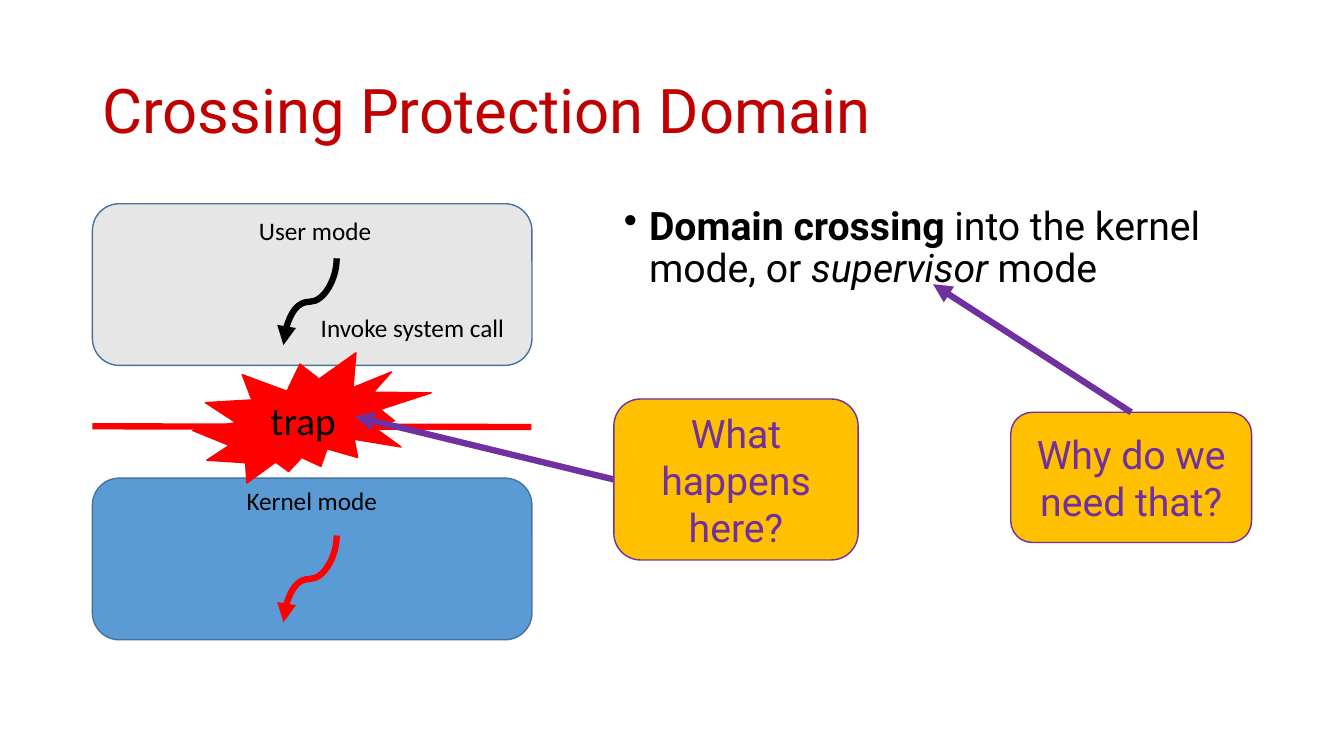
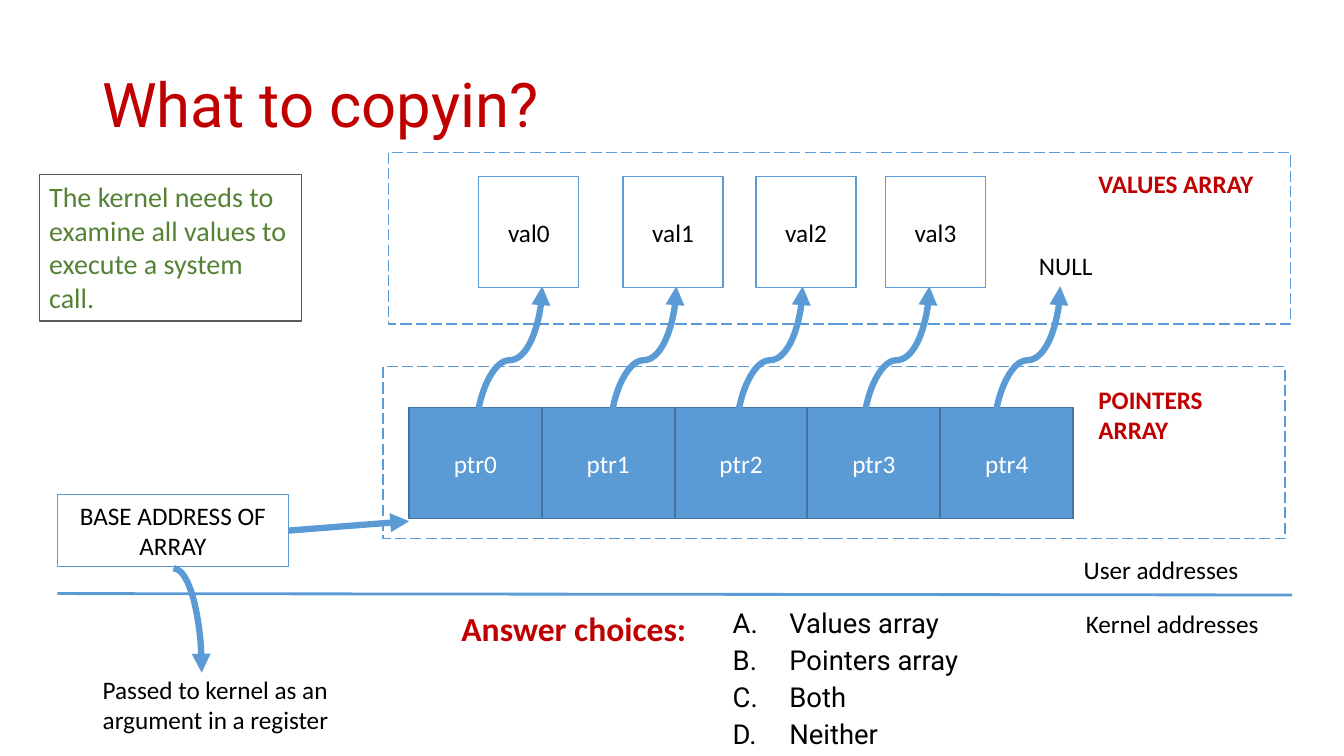
"""Build two slides on system calls: domain crossing and copyin."""
from dataclasses import dataclass

from lxml.etree import SubElement
from pptx import Presentation
from pptx.dml.color import RGBColor
from pptx.enum.dml import MSO_LINE
from pptx.enum.shapes import MSO_CONNECTOR as LINK, MSO_SHAPE as SHAPE
from pptx.enum.text import MSO_ANCHOR as ANCHOR, PP_ALIGN as ALIGN
from pptx.oxml.ns import qn
from pptx.util import Pt


@dataclass(frozen=True)
class Theme:
    """Colours, fonts and type sizes of the presentation."""
    black: str = "000000"
    white: str = "FFFFFF"
    crimson: str = "C00000"
    red: str = "FF0000"
    blue: str = "5B9BD5"
    navy: str = "43739E"
    purple: str = "7030A0"
    amber: str = "FFC000"
    green: str = "548235"
    pale: str = "E7E6E6"
    grey: str = "595959"
    head_font: str = "Roboto"
    label_font: str = "Calibri"
    title: float = 44
    body: float = 28
    heading: float = 24
    note: float = 20
    choice: float = 19.6
    label: float = 18
    thin: float = 0.75
    outline: float = 1
    divider: float = 2
    thick: float = 4.5


T = Theme()


def rgb(code):
    """Return a colour from its hex code."""
    return RGBColor.from_string(code)


def write(holder, paragraphs, size=T.label, color=T.black, font=T.label_font, bold=False,
          align=ALIGN.LEFT, anchor=ANCHOR.TOP, spacing=None, before=None, bullet=None, indent=0):
    """Fill a text frame; a paragraph is a string or a list of (text, bold, italic)."""
    frame = holder.text_frame
    frame.word_wrap = True
    frame.vertical_anchor = anchor
    for number, content in enumerate(paragraphs):
        paragraph = frame.add_paragraph() if number else frame.paragraphs[0]
        if bullet:
            properties = paragraph._p.get_or_add_pPr()
            properties.set("marL", str(Pt(indent)))
            properties.set("indent", str(-Pt(indent)))
            tag, key, value = bullet
            SubElement(properties, qn(tag)).set(key, value)
        paragraph.alignment = align
        paragraph.line_spacing = spacing
        paragraph.space_before = None if before is None else Pt(before)
        paragraph.font.size = Pt(size)
        paragraph.font.name = font
        paragraph.font.color.rgb = rgb(color)
        if isinstance(content, str):
            paragraph.font.bold = bold
            paragraph.add_run().text = content
            continue
        for text, strong, slanted in content:
            run = paragraph.add_run()
            run.text = text
            run.font.bold = strong
            run.font.italic = slanted


def add_text(slide, place, *paragraphs, **style):
    """Add a wrapped text box."""
    write(slide.shapes.add_textbox(*map(Pt, place)), paragraphs, **style)


def add_title(slide, top, text):
    """Add the slide title."""
    add_text(slide, (66, top, 828, 104), text, size=T.title, color=T.crimson,
             font=T.head_font, anchor=ANCHOR.MIDDLE, spacing=0.9)


def add_box(slide, kind, place, fill=None, line=T.blue, width=T.outline, text=None, **style):
    """Add a preset shape with optional fill and text."""
    box = slide.shapes.add_shape(kind, *map(Pt, place))
    box.shadow.inherit = False
    if fill:
        box.fill.solid()
        box.fill.fore_color.rgb = rgb(fill)
    else:
        box.fill.background()
    box.line.color.rgb = rgb(line)
    box.line.width = Pt(width)
    if text:
        write(box, [text], **{"align": ALIGN.CENTER, "anchor": ANCHOR.MIDDLE, **style})
    return box


def add_arrowhead(stroke):
    """Put a triangle at the end of a line."""
    SubElement(stroke.element.spPr.find(qn("a:ln")), qn("a:tailEnd")).set("type", "triangle")


def add_link(slide, start, end, color, width=T.thick, arrow=True, kind=LINK.STRAIGHT):
    """Add a connector between two points."""
    link = slide.shapes.add_connector(kind, *map(Pt, (*start, *end)))
    link.line.color.rgb = rgb(color)
    link.line.width = Pt(width)
    if arrow:
        add_arrowhead(link)
    SubElement(link.element.spPr, qn("a:effectLst"))
    return link


def add_curve(slide, start, end, color):
    """Add an S-shaped arrow that leaves and arrives vertically."""
    (x1, y1), (x2, y2) = start, end
    mid_x, mid_y = (x1 + x2) / 2, (y1 + y2) / 2
    half_x, half_y = (x2 - x1) / 2, (y2 - y1) / 2
    curve = add_link(slide, (mid_x - half_y, mid_y + half_x), (mid_x + half_y, mid_y - half_x),
                     color, kind=LINK.CURVE)
    curve.element.spPr.find(qn("a:xfrm")).set("rot", str(90 * 60000))


def add_mode(slide, top, fill, name, name_place, flow_top, flow_color):
    """Add a processor mode with its name and flow of control."""
    add_box(slide, SHAPE.ROUNDED_RECTANGLE, (66, top, 314, 115.5), fill, T.navy)
    add_text(slide, (*name_place, 199.5, 29), name, align=ALIGN.CENTER)
    add_curve(slide, (240.5, flow_top), (202.5, flow_top + 62), flow_color)


def add_question(slide, place, text):
    """Add an amber question callout."""
    add_box(slide, SHAPE.ROUNDED_RECTANGLE, place, T.amber, T.purple, text=text,
            size=T.body, color=T.purple, font=T.head_font)


def build_crossing(slide):
    """Draw the slide on crossing the protection domain."""
    add_title(slide, 29, "Crossing Protection Domain")
    add_link(slide, (66, 304.5), (379.5, 305), T.red, arrow=False)
    add_mode(slide, 145.5, T.pale, "User mode", (125.3, 150), 184.5, T.black)
    add_mode(slide, 341.5, T.blue, "Kernel mode", (123, 343), 382.5, T.red)
    add_box(slide, SHAPE.EXPLOSION2, (137.5, 252, 170.5, 93), T.red, T.red,
            text="trap", size=T.body)
    add_text(slide, (438.5, 144, 455, 343),
             [("Domain crossing ", True, False), ("into the kernel mode, or ", False, False),
              ("supervisor ", False, True), ("mode", False, False)],
             size=T.body, font=T.head_font, spacing=0.9, before=10,
             bullet=("a:buChar", "char", "•"), indent=18)
    add_question(slide, (722, 294.5, 172, 93), "Why do we need that?")
    add_question(slide, (438.5, 285, 174.5, 115), "What happens here?")
    add_link(slide, (438.5, 342.5), (253.5, 297.5), T.purple)
    add_link(slide, (808, 294.5), (666.5, 203), T.purple)
    add_text(slide, (222, 219.5, 153.5, 29), "Invoke system call")


def add_array_frame(slide, left, top, name, name_top):
    """Add a dashed frame with the name of the array."""
    frame = add_box(slide, SHAPE.RECTANGLE, (left, top, 644.5, 122.5))
    frame.line.dash_style = MSO_LINE.LONG_DASH
    add_text(slide, (777.5, name_top, 127.5, 51), name, color=T.crimson, bold=True)


def build_copyin(slide):
    """Draw the slide on what the kernel copies in."""
    add_title(slide, 25, "What to copyin?")
    add_link(slide, (41, 424), (923, 425), T.blue, T.divider, arrow=False)
    for index in range(5):
        add_box(slide, SHAPE.RECTANGLE, (292.3 + 94.9 * index, 291, 94.5, 79.5), T.blue, T.navy,
                text=f"ptr{index}", color=T.white)
    for left in (340, 435.8, 526, 616.5, 710):
        add_curve(slide, (left, 310.3), (left + 47.3, 204.5), T.blue)
    for index, left in enumerate((342, 445, 540, 632.5)):
        add_box(slide, SHAPE.RECTANGLE, (left, 126, 71.5, 79.5), T.white, text=f"val{index}")
    add_text(slide, (735, 175.5, 63, 29), "NULL")
    add_array_frame(slide, 277.3, 109, "VALUES ARRAY", 116.5)
    add_array_frame(slide, 273.5, 262, "POINTERS ARRAY", 271)

    add_text(slide, (767, 392.5, 155.5, 29), "User addresses")
    add_text(slide, (768.5, 430.8, 155.5, 29), "Kernel addresses")
    add_box(slide, SHAPE.RECTANGLE, (41, 353.5, 165, 51), width=T.thin,
            text="BASE ADDRESS OF ARRAY", anchor=ANCHOR.TOP)
    add_link(slide, (206, 379), (292.3, 372.3), T.blue)
    add_arrowhead(add_box(slide, SHAPE.ARC, (103.8, 406, 40.3, 149), width=T.thick))
    add_text(slide, (66.3, 478, 211.7, 51), "Passed to kernel as an argument in a register")
    add_box(slide, SHAPE.RECTANGLE, (28, 124.8, 187.5, 104.5), line=T.grey, width=T.thin,
            text="The kernel needs to examine all values to execute a system call.",
            size=T.note, color=T.green, align=ALIGN.LEFT, anchor=ANCHOR.TOP)

    add_text(slide, (322.5, 430.8, 178.5, 36), "Answer choices:",
             size=T.heading, color=T.crimson, bold=True)
    add_text(slide, (516.3, 435.8, 191.5, 104), "Values array", "Pointers array", "Both", "Neither",
             size=T.choice, font=T.head_font, spacing=0.7, before=10,
             bullet=("a:buAutoNum", "type", "alphaUcPeriod"), indent=40.5)


def main():
    """Build and save the presentation."""
    deck = Presentation()
    deck.slide_width, deck.slide_height = Pt(960), Pt(540)
    for build in (build_crossing, build_copyin):
        build(deck.slides.add_slide(deck.slide_layouts[6]))
    deck.save("out.pptx")


if __name__ == "__main__":
    main()
